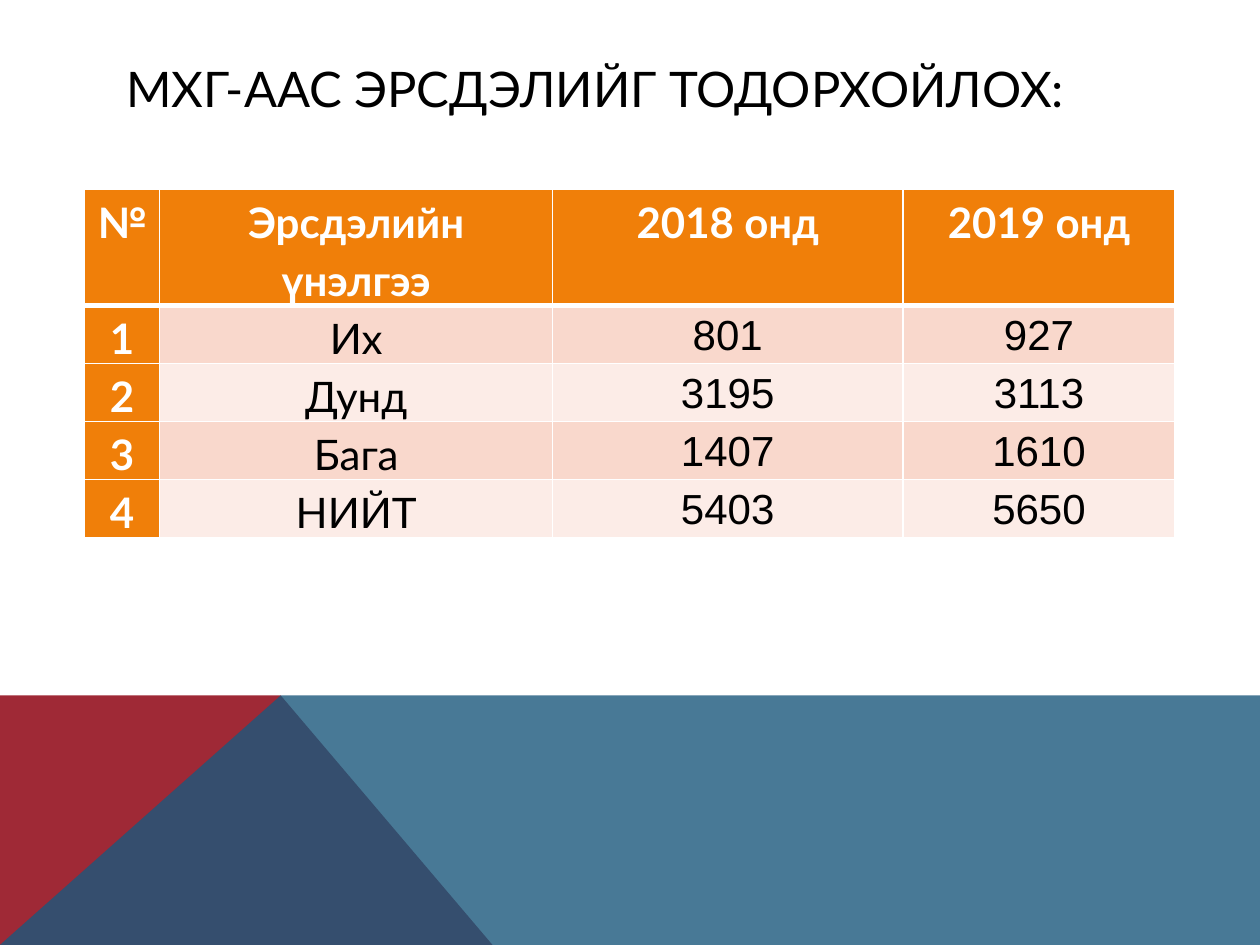
from lxml import etree
from pptx import Presentation
from pptx.dml.color import RGBColor
from pptx.enum.text import MSO_ANCHOR, PP_ALIGN
from pptx.oxml.ns import qn
from pptx.util import Cm, Pt

LEFT, CENTER = PP_ALIGN.LEFT, PP_ALIGN.CENTER
MIDDLE = MSO_ANCHOR.MIDDLE
TITLE_ONLY = 5

COLORS = {
    "red": "9F2936",
    "blue": "1B587C",
    "orange": "F07F09",
    "band_dark": "F9D8CC",
    "band_light": "FCECE7",
    "white": "FFFFFF",
    "black": "000000",
}


def rgb(name):
    return RGBColor.from_string(COLORS[name])


def set_borders(cell, bottom_width):
    properties = cell._tc.get_or_add_tcPr()
    widths = {"lnL": 1, "lnR": 1, "lnT": 1, "lnB": bottom_width}
    for index, (side, width) in enumerate(widths.items()):
        line = etree.Element(qn(f"a:{side}"), w=str(Pt(width)))
        fill = etree.SubElement(line, qn("a:solidFill"))
        etree.SubElement(fill, qn("a:srgbClr"), val=COLORS["white"])
        properties.insert(index, line)


presentation = Presentation()
presentation.slide_width = Cm(25.4)
presentation.slide_height = Cm(19.05)
slide = presentation.slides.add_slide(presentation.slide_layouts[TITLE_ONLY])

# Decorative band: red triangle under a translucent blue area
band_top, band_bottom, peak = 14.02, 19.05, 5.66
band_shapes = [
    ("red", 100, [(0, band_bottom), (0, band_top), (peak, band_top), (9.93, band_bottom)]),
    ("blue", 80, [(0, band_bottom), (peak, band_top), (25.4, band_top), (25.4, band_bottom)]),
]
for color, opacity, points in band_shapes:
    corners = [(Cm(x), Cm(y)) for x, y in points]
    builder = slide.shapes.build_freeform(*corners[0])
    builder.add_line_segments(corners[1:], close=True)
    shape = builder.convert_to_shape()
    shape.shadow.inherit = False
    shape.line.fill.background()
    shape.fill.solid()
    shape.fill.fore_color.rgb = rgb(color)
    if opacity < 100:
        color_element = shape._element.spPr.find(qn("a:solidFill"))[0]
        etree.SubElement(color_element, qn("a:alpha"), val=str(opacity * 1000))

# Title
title = slide.shapes.title
title.left, title.top, title.width, title.height = Cm(2.29), Cm(1.02), Cm(20.88), Cm(1.52)
title.text_frame.text = "МХГ-ААС ЭРСДЭЛИЙГ ТОДОРХОЙЛОХ:"
title.text_frame.vertical_anchor = MIDDLE
paragraph = title.text_frame.paragraphs[0]
paragraph.alignment = LEFT
paragraph.font.name = "Lato"
paragraph.font.size = Pt(28)
paragraph.font.color.rgb = rgb("black")

# Risk table
rows = [
    ("№", "Эрсдэлийн үнэлгээ", "2018 онд", "2019 онд"),
    ("1", "Их", "801", "927"),
    ("2", "Дунд", "3195", "3113"),
    ("3", "Бага", "1407", "1610"),
    ("4", "НИЙТ", "5403", "5650"),
]
column_widths = [1.52, 7.92, 7.06, 5.49]
header_height, row_height = 2.31, 1.17
table = slide.shapes.add_table(
    len(rows), len(column_widths), Cm(1.7), Cm(3.82),
    Cm(sum(column_widths)), Cm(header_height + 4 * row_height),
).table
table.first_col = True
for column, width in zip(table.columns, column_widths):
    column.width = Cm(width)

for row_index, values in enumerate(rows):
    is_header = row_index == 0
    table.rows[row_index].height = Cm(header_height if is_header else row_height)
    band = "band_dark" if row_index % 2 else "band_light"
    for column_index, value in enumerate(values):
        is_heading = is_header or column_index == 0
        cell = table.cell(row_index, column_index)
        cell.margin_left = cell.margin_right = Cm(0.18)
        cell.margin_top = cell.margin_bottom = 0
        cell.fill.solid()
        cell.fill.fore_color.rgb = rgb("orange" if is_heading else band)
        set_borders(cell, 3 if is_header else 1)
        cell.text = value
        paragraph = cell.text_frame.paragraphs[0]
        paragraph.alignment = CENTER
        paragraph.line_spacing = 1.15
        paragraph.font.name = "Lato" if is_heading or column_index == 1 else "Arial"
        paragraph.font.size = Pt(24)
        paragraph.font.bold = is_heading
        paragraph.font.color.rgb = rgb("white" if is_heading else "black")

presentation.save("out.pptx")
